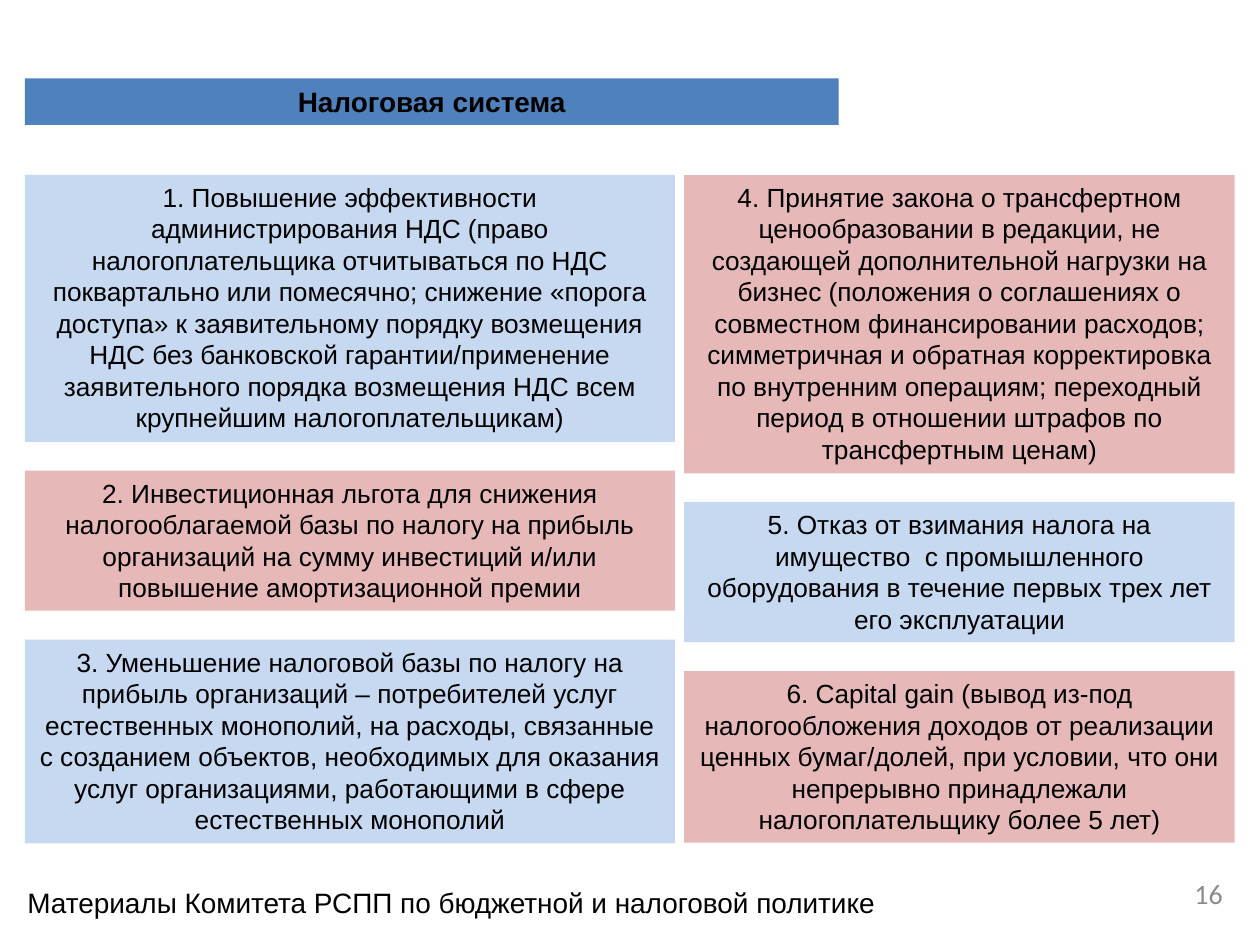
from pptx import Presentation
from pptx import util as u
from pptx.dml.color import RGBColor
from pptx.enum import shapes, text

BLUE, PALE_BLUE, PALE_RED = "4F81BD", "C6D9F1", "E6B9B8"
BLACK, GRAY = "000000", "8C8C8C"
LEFT, CENTER, RIGHT = text.PP_ALIGN.LEFT, text.PP_ALIGN.CENTER, text.PP_ALIGN.RIGHT
TOP, MIDDLE = text.MSO_ANCHOR.TOP, text.MSO_ANCHOR.MIDDLE


def color(value):
    return RGBColor.from_string(value)


class Deck:
    FRAME = dict(word_wrap=True, auto_size=text.MSO_AUTO_SIZE.NONE,
                 margin_left=u.Pt(7.2), margin_right=u.Pt(7.2),
                 margin_top=u.Pt(3.6), margin_bottom=u.Pt(3.6))
    FONT = dict(name="Arial", size=u.Pt(16), bold=False)

    def __init__(self, prs):
        self.s = prs.slides.add_slide(prs.slide_layouts[5])

    def set_text(self, sp, words, align, anchor=TOP, ink=BLACK, **font):
        tf = sp.text_frame
        for key, value in {**self.FRAME, "vertical_anchor": anchor}.items():
            setattr(tf, key, value)
        p = tf.paragraphs[0]
        p.alignment = align
        r = p.add_run()
        r.text = words
        for key, value in {**self.FONT, **font}.items():
            setattr(r.font, key, value)
        r.font.color.rgb = color(ink)

    def title(self, box, words, fill):
        sp = self.s.shapes.title
        sp.left, sp.top, sp.width, sp.height = map(u.Pt, box)
        sp.fill.solid()
        sp.fill.fore_color.rgb = color(fill)
        self.set_text(sp, words, CENTER, bold=True)

    def card(self, box, words, fill):
        sp = self.s.shapes.add_shape(shapes.MSO_SHAPE.RECTANGLE, *map(u.Pt, box))
        sp.shadow.inherit = False
        sp.fill.solid()
        sp.fill.fore_color.rgb = color(fill)
        sp.line.fill.background()
        self.set_text(sp, words, CENTER, size=u.Pt(15))

    def label(self, box, words, align, **style):
        sp = self.s.shapes.add_textbox(*map(u.Pt, box))
        self.set_text(sp, words, align, **style)


# Columns of cards: left, width, fills in turn, (height, words)
COLUMNS = [
    (14.2, 371.5, (PALE_BLUE, PALE_RED), [
        (152.5, "1. Повышение эффективности администрирования НДС (право "
                "налогоплательщика отчитываться по НДС поквартально или помесячно; "
                "снижение «порога доступа» к заявительному порядку возмещения НДС "
                "без банковской гарантии/применение заявительного порядка "
                "возмещения НДС всем крупнейшим налогоплательщикам)"),
        (80, "2. Инвестиционная льгота для снижения налогооблагаемой базы по "
             "налогу на прибыль организаций на сумму инвестиций и/или повышение "
             "амортизационной премии"),
        (116.5, "3. Уменьшение налоговой базы по налогу на прибыль организаций – "
                "потребителей услуг естественных монополий, на расходы, связанные "
                "с созданием объектов, необходимых для оказания услуг "
                "организациями, работающими в сфере естественных монополий"),
    ]),
    (391, 314.6, (PALE_RED, PALE_BLUE), [
        (170.5, "4. Принятие закона о трансфертном ценообразовании в редакции, не "
                "создающей дополнительной нагрузки на бизнес (положения о "
                "соглашениях о совместном финансировании расходов; симметричная и "
                "обратная корректировка по внутренним операциям; переходный период "
                "в отношении штрафов по трансфертным ценам)"),
        (80, "5. Отказ от взимания налога на имущество  с промышленного "
             "оборудования в течение первых трех лет его эксплуатации"),
        (98, "6. Capital gain (вывод из-под налогообложения доходов от реализации "
             "ценных бумаг/долей, при условии, что они непрерывно принадлежали "
             "налогоплательщику более 5 лет)"),
    ]),
]
CARDS_TOP, GAP = 100, 16.5


def main():
    prs = Presentation()
    prs.slide_width, prs.slide_height = u.Pt(720), u.Pt(540)
    deck = Deck(prs)

    # Heading
    deck.title((14.2, 44.8, 465, 26.6), "Налоговая система", BLUE)

    # Proposals, stacked with equal gaps
    for left, width, fills, cards in COLUMNS:
        top = CARDS_TOP
        for i, (height, words) in enumerate(cards):
            deck.card((left, top, width, height), words, fills[i % 2])
            top += height + GAP

    # Footer
    deck.label((8.6, 502.6, 601, 26.6),
               "Материалы Комитета РСПП по бюджетной и налоговой политике", LEFT)
    deck.label((537.8, 496, 168, 28.8), "16", RIGHT,
               anchor=MIDDLE, ink=GRAY, name="Calibri")

    prs.save("out.pptx")


if __name__ == "__main__":
    main()
